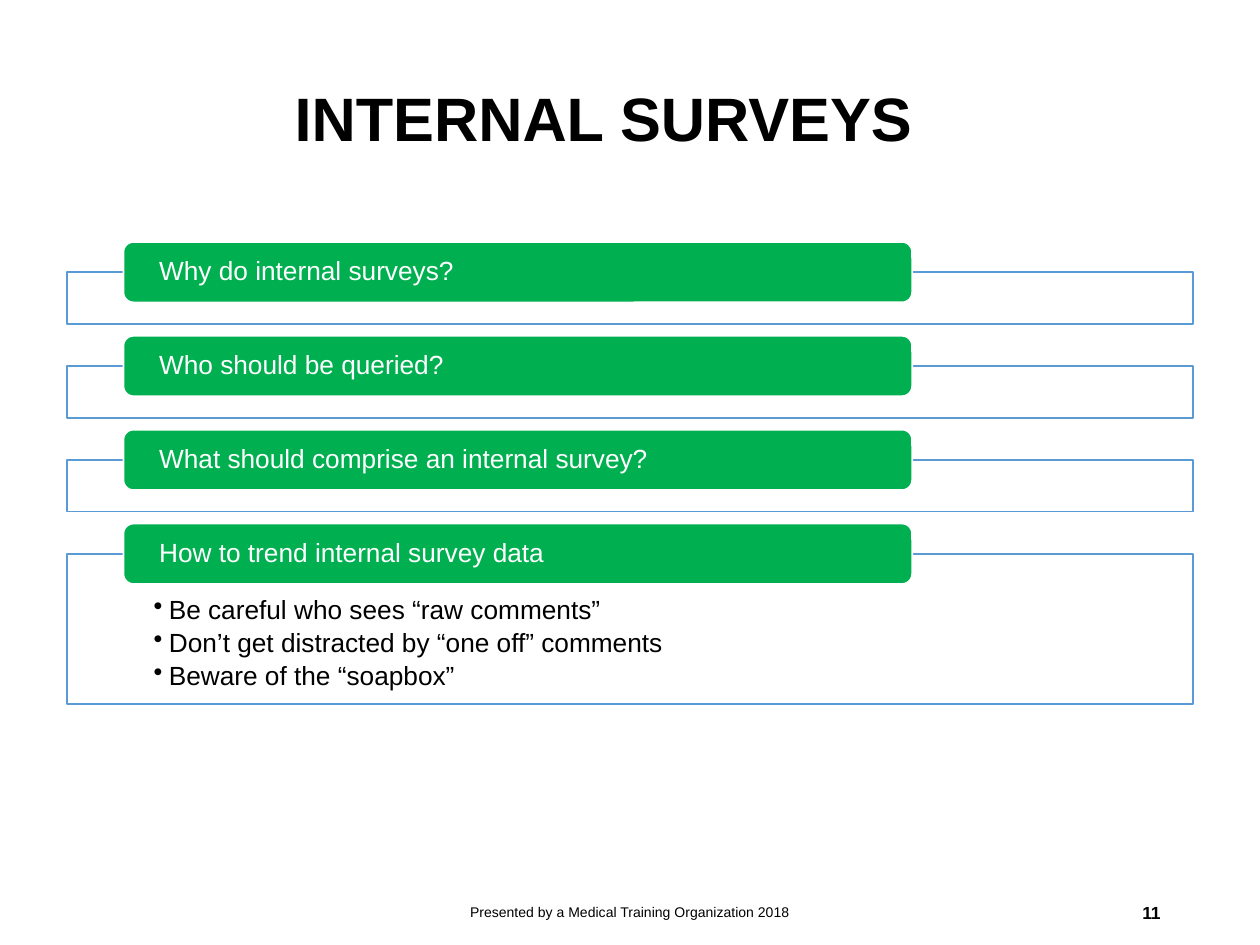
from lxml import etree
from pptx import Presentation
from pptx.dml.color import RGBColor
from pptx.enum.shapes import MSO_SHAPE
from pptx.enum.text import MSO_ANCHOR, PP_ALIGN
from pptx.oxml.ns import qn
from pptx.util import Inches, Pt

RECT, ROUND = MSO_SHAPE.RECTANGLE, MSO_SHAPE.ROUNDED_RECTANGLE
TOP, MID = MSO_ANCHOR.TOP, MSO_ANCHOR.MIDDLE
LEFT, MIDDLE, RIGHT = PP_ALIGN.LEFT, PP_ALIGN.CENTER, PP_ALIGN.RIGHT
BLACK, WHITE, GREEN, BLUE = "000000", "FFFFFF", "00B050", "5B9BD5"

# Content: heading and its points
TOPICS = [
    ("Why do internal surveys?", []),
    ("Who should be queried?", []),
    ("What should comprise an internal survey?", []),
    ("How to trend internal survey data", [
        "Be careful who sees “raw comments”",
        "Don’t get distracted by “one off” comments",
        "Beware of the “soapbox”",
    ]),
]
# Plain text: wording, place, paragraph format, font format
LABELS = [
    ("INTERNAL SURVEYS", (2.24, 0.41, 7.59, 1.11),
     {"alignment": LEFT, "line_spacing": 0.9}, {"size": Pt(35), "bold": True}),
    ("Presented by a Medical Training Organization 2018",
     (3.31, 7.04, 3.38, 0.4), {"alignment": MIDDLE}, {"size": Pt(8)}),
    ("11", (7.06, 7.04, 2.25, 0.4), {"alignment": RIGHT},
     {"size": Pt(10), "bold": True}),
]
BODY = {"alignment": LEFT, "line_spacing": 0.9}
POINT = {**BODY, "space_after": Pt(2.6)}
SIZE = {"size": Pt(15)}

# Layout in inches
START, STEP = 1.92, 0.745
PILL_X, PILL_W, PILL_H = 0.98, 6.26, 0.48
BOX_X, BOX_W, BOX_H, TALL_H = 0.53, 8.94, 0.41, 1.19


def rgb(code):
    return RGBColor.from_string(code)


def apply(obj, values):
    for name, value in values.items():
        setattr(obj, name, value)


def add_bullet(para, indent):
    props = para._p.get_or_add_pPr()
    props.set("marL", str(Inches(indent)))
    props.set("indent", str(-Inches(indent)))
    etree.SubElement(props, qn("a:buChar"), char="•")


def write(shape, lines, form, font, color, pads=None, anchor=MID, bullet=False):
    frame = shape.text_frame
    apply(frame, {"word_wrap": True, "vertical_anchor": anchor})
    if pads:
        sides = ("margin_left", "margin_top", "margin_right", "margin_bottom")
        apply(frame, dict(zip(sides, map(Inches, pads))))
    for i, line in enumerate(lines):
        para = frame.add_paragraph() if i else frame.paragraphs[0]
        if bullet:
            add_bullet(para, 0.12)
        apply(para, form)
        run = para.add_run()
        run.text = line
        apply(run.font, {"name": "Arial", **font})
        run.font.color.rgb = rgb(color)


def add_block(slide, kind, place, fill, line):
    shape = slide.shapes.add_shape(kind, *map(Inches, place))
    shape.shadow.inherit = False
    shape.fill.solid()
    shape.fill.fore_color.rgb = rgb(fill)
    shape.line.color.rgb = rgb(line)
    shape.line.width = Pt(1)
    return shape


def fade(shape, percent):
    color = shape._element.spPr.find(qn("a:solidFill"))[0]
    etree.SubElement(color, qn("a:alpha"), val=str(percent * 1000))


def main():
    deck = Presentation()
    deck.slide_width, deck.slide_height = Inches(10), Inches(7.5)
    slide = deck.slides.add_slide(deck.slide_layouts[6])

    # Title, footer and page number
    for text, place, form, font in LABELS:
        box = slide.shapes.add_textbox(*map(Inches, place))
        write(box, [text], form, font, BLACK)

    # Framed topics, each with a heading over its top edge
    for i, (head, points) in enumerate(TOPICS):
        top = START + i * STEP
        height = TALL_H if points else BOX_H
        box = add_block(slide, RECT, (BOX_X, top + PILL_H / 2, BOX_W, height),
                        WHITE, BLUE)
        fade(box, 90)
        if points:
            write(box, points, POINT, SIZE, BLACK,
                  (0.69, 0.34, 0.69, 0.12), TOP, True)
        pill = add_block(slide, ROUND, (PILL_X, top, PILL_W, PILL_H),
                         GREEN, WHITE)
        write(pill, [head], BODY, SIZE, WHITE, (0.26, 0, 0.26, 0))

    deck.save("out.pptx")


if __name__ == "__main__":
    main()
